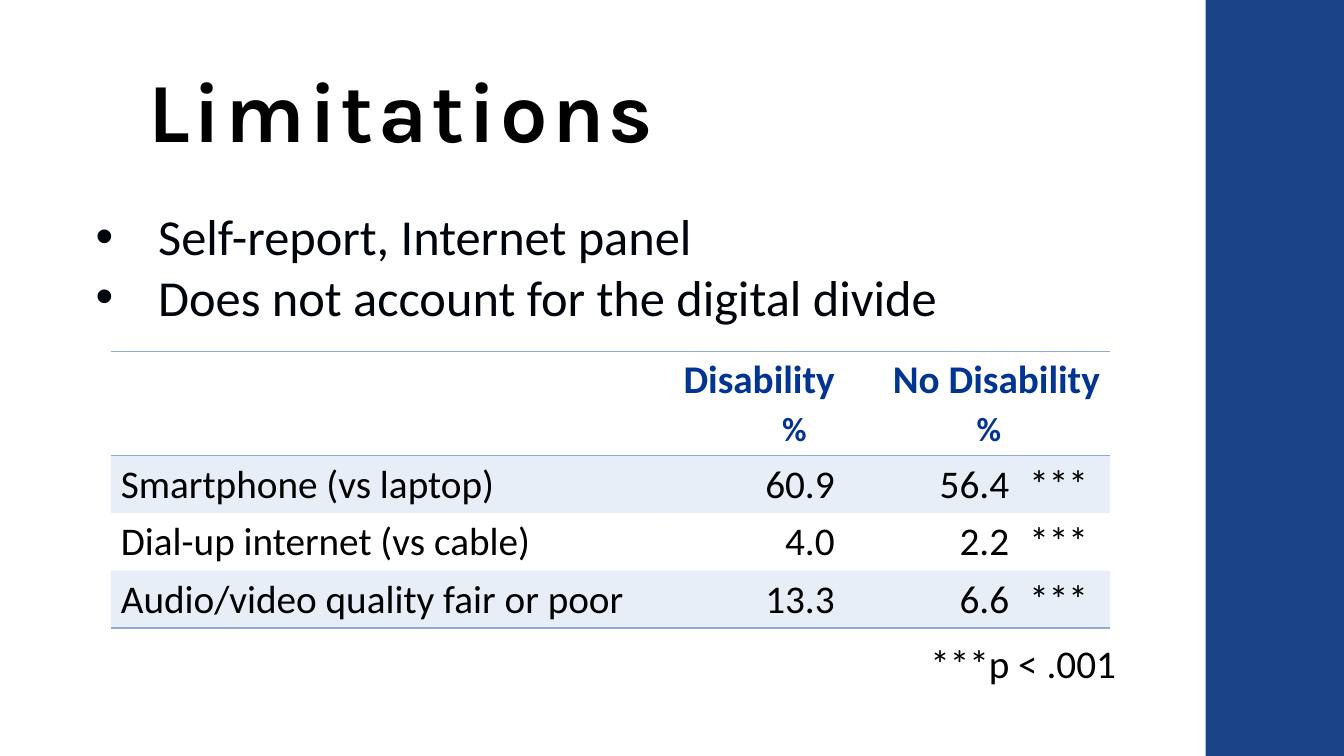
import dataclasses

import pptx
import pptx.dml.color
import pptx.enum.shapes
import pptx.enum.text
import pptx.oxml
import pptx.oxml.ns
import pptx.util

ALIGN = pptx.enum.text.PP_ALIGN
ANCHOR = pptx.enum.text.MSO_ANCHOR
NAMESPACE = pptx.oxml.ns.nsdecls("a")
PLAIN_TABLE = "{2D5ABB26-0587-4C30-8999-92F81FD0307C}"


@dataclasses.dataclass(frozen=True)
class Theme:
    bar: str = "1B4388"
    heading: str = "013591"
    bullet: str = "00040C"
    text: str = "000000"
    band: str = "8EAADB"
    band_opacity: int = 20
    title_font: str = "Karla"
    body_font: str = "Calibri"
    title_size: int = 60
    bullet_size: int = 36
    table_size: int = 28
    unit_size: int = 24


class SlideBuilder:
    """Draws on one slide; every place and length is a percentage of its size."""

    def __init__(self, presentation, theme):
        self.width = presentation.slide_width
        self.height = presentation.slide_height
        self.theme = theme
        self.slide = presentation.slides.add_slide(presentation.slide_layouts[6])

    def across(self, share):
        return round(self.width * share / 100)

    def down(self, share):
        return round(self.height * share / 100)

    def box(self, left, top, width, height):
        return self.across(left), self.down(top), self.across(width), self.down(height)

    def bar(self, place):
        shape = self.slide.shapes.add_shape(
            pptx.enum.shapes.MSO_SHAPE.RECTANGLE, *self.box(*place))
        shape.shadow.inherit = False
        shape.fill.solid()
        shape.fill.fore_color.rgb = pptx.dml.color.RGBColor.from_string(self.theme.bar)
        shape.line.fill.background()

    def add_text(self, paragraph, text, color, size, font=None, bold=False, align=ALIGN.LEFT):
        paragraph.alignment = align
        run = paragraph.add_run()
        run.text = text
        style = {"name": font or self.theme.body_font,
                 "size": pptx.util.Pt(size), "bold": bold}
        for attribute, value in style.items():
            setattr(run.font, attribute, value)
        run.font.color.rgb = pptx.dml.color.RGBColor.from_string(color)
        return run

    def text_box(self, place, anchor=ANCHOR.TOP):
        frame = self.slide.shapes.add_textbox(*self.box(*place)).text_frame
        frame.word_wrap = True
        frame.vertical_anchor = anchor
        return frame

    def title(self, place, text):
        paragraph = self.text_box(place, ANCHOR.BOTTOM).paragraphs[0]
        paragraph.line_spacing = 0.9
        run = self.add_text(paragraph, text, self.theme.text, self.theme.title_size,
                            self.theme.title_font, bold=True)
        run._r.get_or_add_rPr().set("spc", "300")

    def label(self, place, text, color, size, bold=False):
        self.add_text(self.text_box(place).paragraphs[0], text, color, size, bold=bold)

    def bullets(self, place, lines):
        frame = self.text_box(place)
        indent = pptx.util.Inches(0.62)
        for index, line in enumerate(lines):
            paragraph = frame.add_paragraph() if index else frame.paragraphs[0]
            properties = paragraph._p.get_or_add_pPr()
            properties.set("marL", str(indent))
            properties.set("indent", str(-indent))
            for bullet in ('buFont {} typeface="Arial"', 'buChar {} char="•"'):
                properties.append(pptx.oxml.parse_xml(f"<a:{bullet.format(NAMESPACE)}/>"))
            self.add_text(paragraph, line, self.theme.bullet, self.theme.bullet_size)

    def rule(self, cell, side):
        """Draw one cell border; side is T for top or B for bottom."""
        cell._tc.get_or_add_tcPr().append(pptx.oxml.parse_xml(
            f'<a:ln{side} {NAMESPACE} w="12700"><a:solidFill>'
            f'<a:srgbClr val="{self.theme.band}"/></a:solidFill></a:ln{side}>'))

    def shade(self, cell):
        """Fill a cell with the see-through band colour; call it after rule."""
        cell._tc.get_or_add_tcPr().append(pptx.oxml.parse_xml(
            f'<a:solidFill {NAMESPACE}><a:srgbClr val="{self.theme.band}">'
            f'<a:alpha val="{self.theme.band_opacity * 1000}"/></a:srgbClr></a:solidFill>'))

    def table(self, left, top, widths, heights, rows, aligns):
        place = self.box(left, top, sum(widths), sum(heights))
        table = self.slide.shapes.add_table(len(rows), len(widths), *place).table
        table.first_row = table.horz_banding = False
        table._tbl.tblPr.find(pptx.oxml.ns.qn("a:tableStyleId")).text = PLAIN_TABLE
        for column, width in zip(table.columns, widths):
            column.width = self.across(width)
        for row, height in zip(table.rows, heights):
            row.height = self.down(height)
        table.cell(0, 2).merge(table.cell(0, 3))

        for row_index, row in enumerate(rows):
            header = row_index == 0
            color = self.theme.heading if header else self.theme.text
            for column_index, (text, align) in enumerate(zip(row, aligns)):
                cell = table.cell(row_index, column_index)
                if header:
                    self.rule(cell, "T")
                if header or row_index == len(rows) - 1:
                    self.rule(cell, "B")
                if row_index % 2:
                    self.shade(cell)
                else:
                    cell.fill.background()
                if text:
                    self.add_text(cell.text_frame.paragraphs[0], text, color,
                                  self.theme.table_size, bold=header, align=align)


def main():
    presentation = pptx.Presentation()
    presentation.slide_width = pptx.util.Inches(13.33)
    presentation.slide_height = pptx.util.Inches(7.5)
    theme = Theme()
    builder = SlideBuilder(presentation, theme)

    builder.bar((89.7, 0, 10.3, 100))
    builder.title((10.28, 5.73, 78.4, 16.13), "Limitations")
    builder.bullets((6.38, 26.53, 77.27, 33.6), [
        "Self-report, Internet panel",
        "Does not account for the digital divide",
    ])
    builder.table(
        8.25, 46.5,
        widths=[40.58, 14.03, 12.98, 6.75],
        heights=[13.8, 7.6, 7.6, 7.6],
        rows=[
            ("", "Disability", "No Disability", ""),
            ("Smartphone (vs laptop)", "60.9", "56.4", "***"),
            ("Dial-up internet (vs cable)", "4.0", "2.2", "***"),
            ("Audio/video quality fair or poor", "13.3", "6.6", "***"),
        ],
        aligns=[ALIGN.LEFT, ALIGN.RIGHT, ALIGN.RIGHT, ALIGN.LEFT],
    )
    for left in (57.45, 71.93):
        builder.label((left, 53.33, 9.6, 6.67), "%", theme.heading, theme.unit_size, bold=True)
    builder.label((68.48, 83.87, 16.43, 7.6), "***p < .001", theme.text, theme.table_size)

    presentation.save("out.pptx")


if __name__ == "__main__":
    main()
